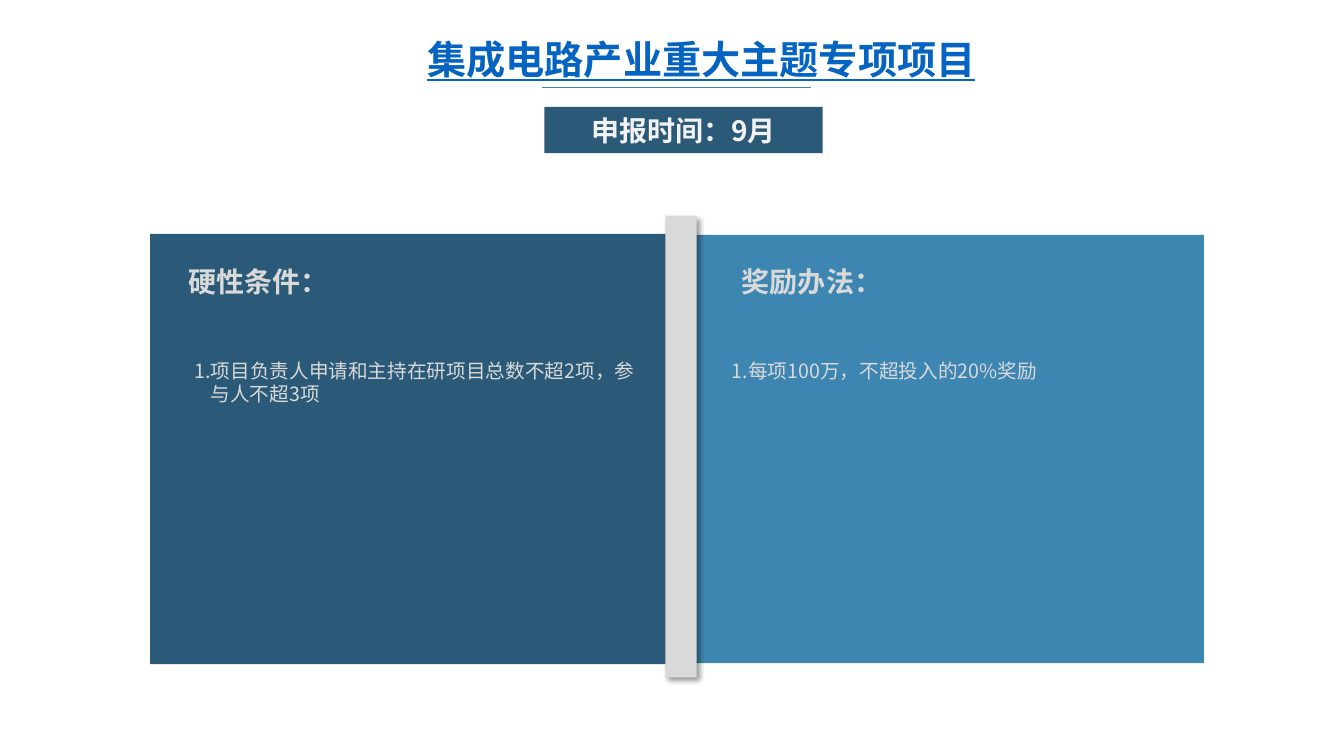
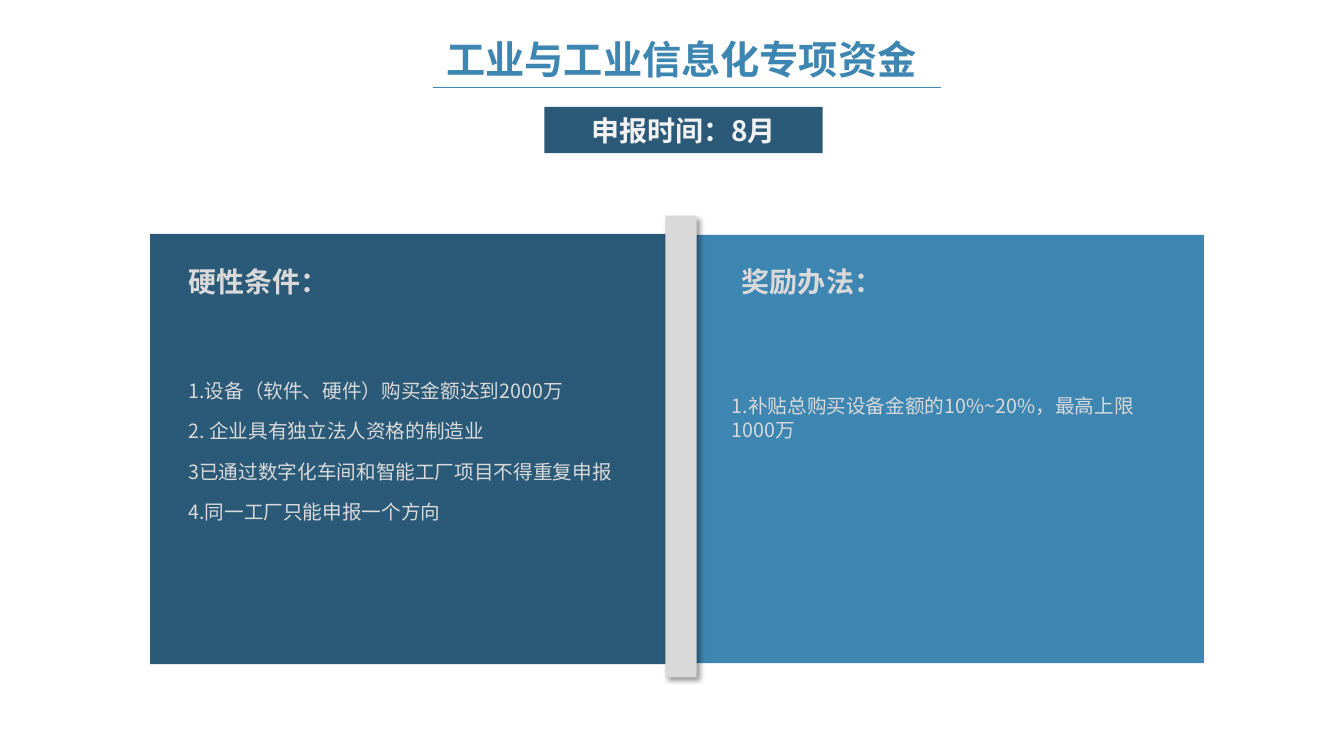
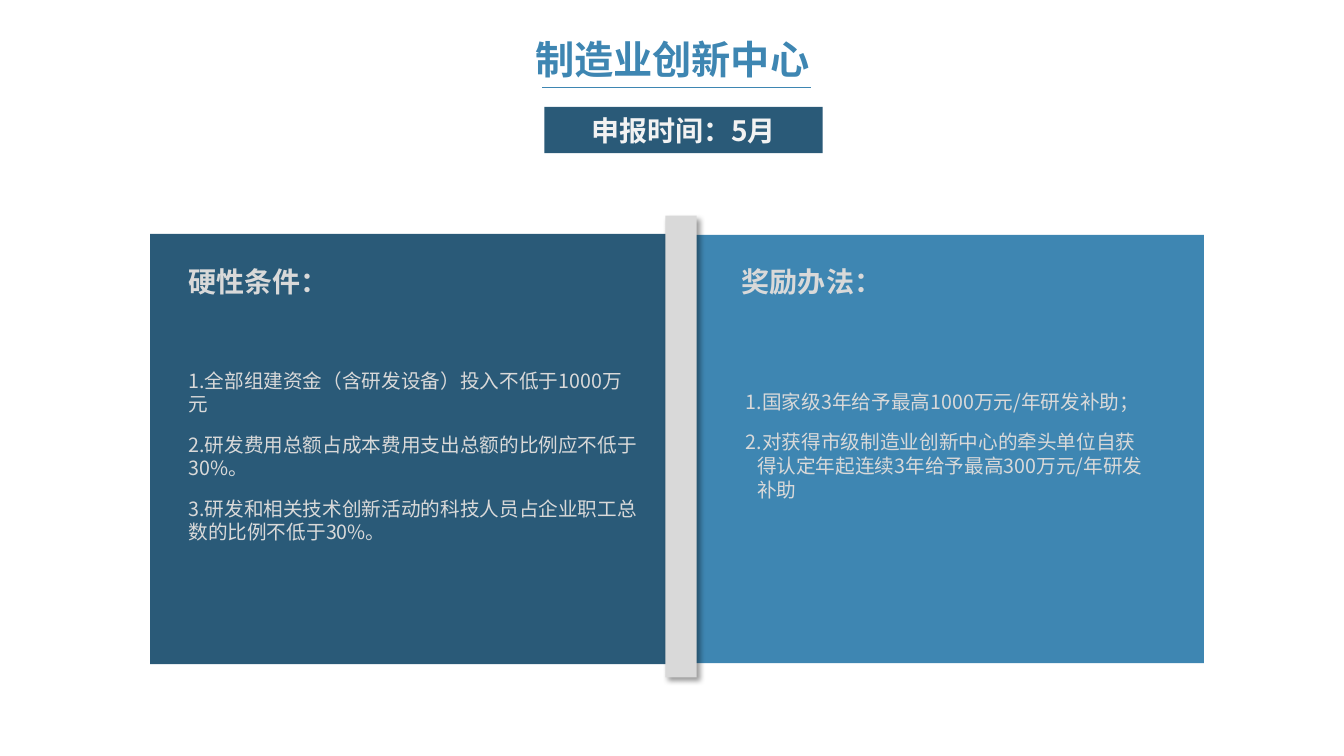
from lxml import etree
from pptx import Presentation
from pptx import util as u
from pptx.dml.color import RGBColor
from pptx.enum import shapes, text
from pptx.oxml.ns import qn

PX = 9144
NAVY, BLUE, LINK = "2A5A78", "3E86B2", "0563C1"
GREY, PALE = "D9D9D9", "F2F2F2"
CJK, LATIN = "Noto Sans CJK SC", "Calibri"
LEFT, RIGHT = (149, 232, 523, 427), (671, 233, 523, 425)

SLIDES = [
    dict(
        title=("集成电路产业重大主题专项项目", (414, 30, 564, 57), CJK, LINK, True),
        rule=(538, 804),
        month="9月",
        terms=((0, 119, 57), (50, -16), ["1.项目负责人申请和主持在研项目总数不超2项，参与人不超3项"]),
        reward=((45, 118, 34), (50, -50), ["1.每项100万，不超投入的20%奖励"]),
    ),
    dict(
        title=("工业与工业信息化专项资金", (433, 30, 489, 57), LATIN, BLUE, False),
        rule=(429, 933),
        month="8月",
        terms=((28, 139, 155), (50, -50), [
            "1.设备（软件、硬件）购买金额达到2000万",
            "2. 企业具有独立法人资格的制造业",
            "3已通过数字化车间和智能工厂项目不得重复申报",
            "4.同一工厂只能申报一个方向",
        ]),
        reward=((45, 153, 57), (0, 0), ["1.补贴总购买设备金额的10%~20%，最高上限1000万"]),
    ),
    dict(
        title=("制造业创新中心", (521, 30, 294, 57), LATIN, BLUE, False),
        rule=(538, 804),
        month="5月",
        terms=((28, 129, 185), (0, 0), [
            "1.全部组建资金（含研发设备）投入不低于1000万元",
            "2.研发费用总额占成本费用支出总额的比例应不低于30%。",
            "3.研发和相关技术创新活动的科技人员占企业职工总数的比例不低于30%。",
        ]),
        reward=((20, 149, 121), (50, -11), [
            "1.国家级3年给予最高1000万元/年研发补助；",
            "2.对获得市级制造业创新中心的牵头单位自获得认定年起连续3年给予最高300万元/年研发补助",
        ]),
    ),
]


def px(*values):
    return [u.Emu(v * PX) for v in values]


def rgb(color):
    return RGBColor.from_string(color)


def write(tf, lines, size, color, bold=False, font=CJK, underline=None, wrap=True):
    tf.text = "\n".join(lines)
    tf.word_wrap = wrap
    for p in tf.paragraphs:
        for r in p.runs:
            f = r.font
            f.size, f.bold, f.underline, f.name = u.Pt(size), bold, underline, font
            f.color.rgb = rgb(color)
            ea = etree.Element(qn("a:ea"), typeface=CJK)
            r._r.rPr.find(qn("a:latin")).addnext(ea)


def add_text(s, box, lines, size, color, **style):
    tf = s.shapes.add_textbox(*px(*box)).text_frame
    write(tf, lines, size, color, **style)
    tf.auto_size = text.MSO_AUTO_SIZE.SHAPE_TO_FIT_TEXT
    return tf


def add_list(s, box, lines, size, indent, bold=False):
    tf = add_text(s, box, lines, size, GREY, bold=bold)
    margin, first = indent
    for p in tf.paragraphs:
        p.space_before = u.Pt(12)
        pPr = p._p.get_or_add_pPr()
        pPr.set("marL", str(margin * PX))
        pPr.set("indent", str(first * PX))


def add_rect(s, box, color):
    sp = s.shapes.add_shape(shapes.MSO_SHAPE.RECTANGLE, *px(*box))
    sp.shadow.inherit = False
    sp.fill.solid()
    sp.fill.fore_color.rgb = rgb(color)
    sp.line.fill.background()
    return sp


def add_header(s, title, rule, month):
    words, box, font, color, underline = title
    add_text(s, box, [words], 28, color, bold=True, font=font,
             underline=underline, wrap=False)
    x1, x2 = rule
    y = box[1] + box[3]
    line = s.shapes.add_connector(shapes.MSO_CONNECTOR.STRAIGHT, *px(x1, y, x2, y))
    line.line.color.rgb = rgb(BLUE)
    line.line.width = u.Pt(0.5)
    etree.SubElement(line._element.spPr, qn("a:effectLst"))

    tf = add_rect(s, (540, 106, 276, 46), NAVY).text_frame
    write(tf, ["申报时间：" + month], 20, PALE, bold=True, wrap=False)
    tf.vertical_anchor = text.MSO_ANCHOR.MIDDLE
    tf.paragraphs[0].alignment = text.PP_ALIGN.CENTER


def add_panel(s, box, color, heading, heading_at, pad_right, body):
    x, y, w, h = box
    add_rect(s, box, color)
    hx, hy = heading_at
    add_list(s, (x + hx, y + hy, 141, 44), [heading], 20, (50, -50), bold=True)
    (dx, dy, body_h), indent, lines = body
    add_list(s, (x + dx, y + dy, w - dx - pad_right, body_h), lines, 14, indent)


def add_divider(s, box):
    sp = add_rect(s, box, GREY)
    effects = sp._element.spPr.find(qn("a:effectLst"))
    shadow = etree.SubElement(effects, qn("a:outerShdw"), blurRad=str(u.Pt(4)),
                              dist=str(u.Pt(3)), dir="2700000", algn="tl",
                              rotWithShape="0")
    black = etree.SubElement(shadow, qn("a:srgbClr"), val="000000")
    etree.SubElement(black, qn("a:alpha"), val="40000")


def add_program(prs, title, rule, month, terms, reward):
    s = prs.slides.add_slide(prs.slide_layouts[6])
    add_panel(s, LEFT, NAVY, "硬性条件：", (28, 25), 26, terms)
    add_panel(s, RIGHT, BLUE, "奖励办法：", (55, 24), 45, reward)
    add_divider(s, (660, 214, 31, 458))
    add_header(s, title, rule, month)


def main():
    prs = Presentation()
    prs.slide_width, prs.slide_height = u.Inches(13.33), u.Inches(7.5)
    for program in SLIDES:
        add_program(prs, **program)
    prs.save("out.pptx")


if __name__ == "__main__":
    main()
